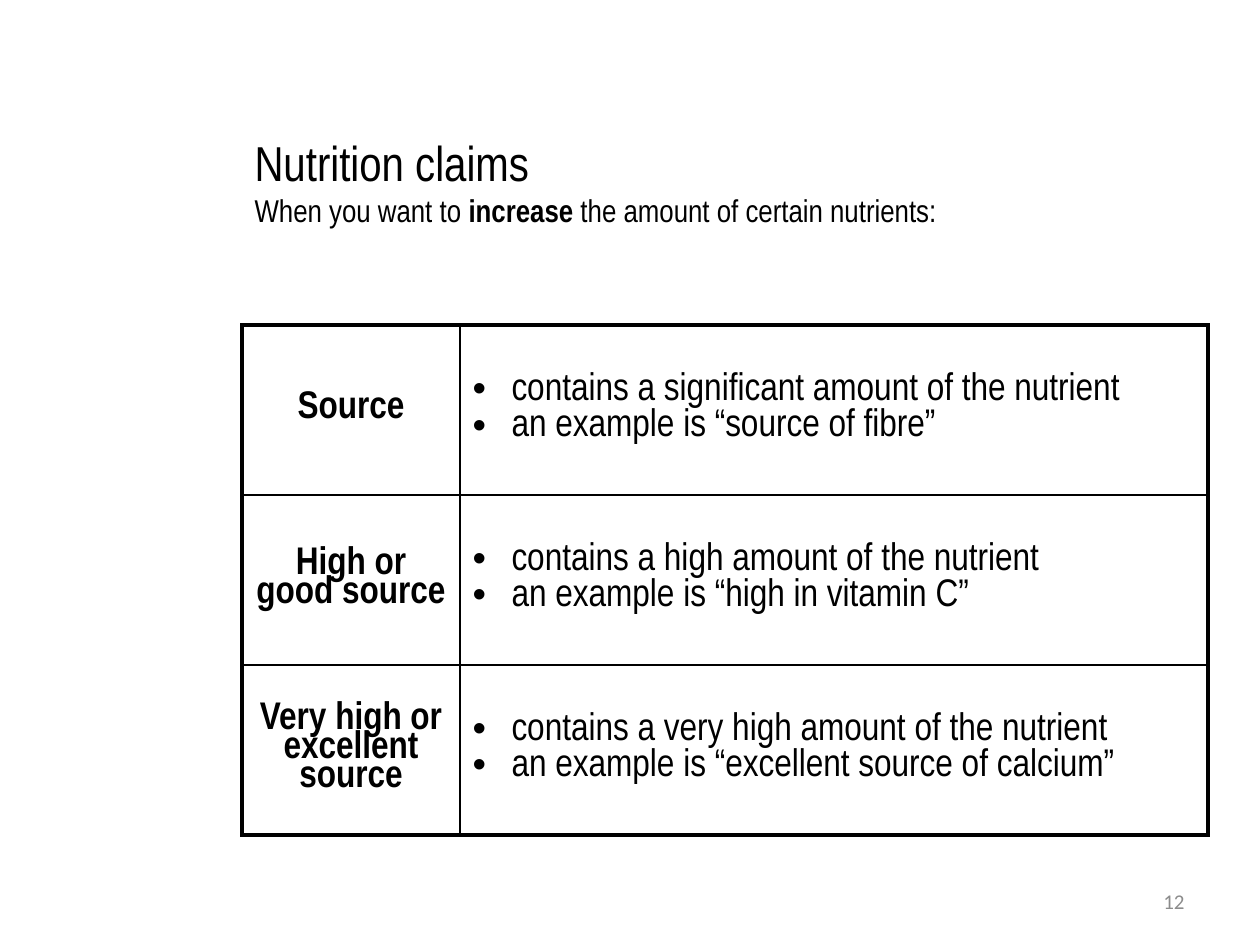
"""Build the slide on nutrition claims that increase nutrients."""
import pptx
import pptx.dml.color
import pptx.enum.text
import pptx.oxml
import pptx.oxml.ns
import pptx.util

COLORS = {"ink": "000000", "number": "8C8C8C"}
BODY_FONT = "Arial Narrow"
HEADING = "Nutrition claims"
SUBHEADING = [("When you want to ", False), ("increase", True),
              (" the amount of certain nutrients:", False)]
CLAIMS = [
    ("Source", ["contains a significant amount of the nutrient",
                "an example is “source of fibre”"]),
    ("High or good source", ["contains a high amount of the nutrient",
                             "an example is “high in vitamin C”"]),
    ("Very high or excellent source", ["contains a very high amount of the nutrient",
                                       "an example is “excellent source of calcium”"]),
]
PAGE_NUMBER = "12"
COLUMN_WIDTHS = [218, 748]
ROW_HEIGHT = 170
INDENT = 39
OUTER_LINE, INNER_LINE = 2.25, 1
ALIGN = pptx.enum.text.PP_ALIGN
ANCHOR = pptx.enum.text.MSO_ANCHOR


def px(length):
    return pptx.util.Emu(length * 914400 // 126)


def box(left, top, width, height):
    return [px(length) for length in (left, top, width, height)]


def style(paragraph, size, align=ALIGN.LEFT, bold=None, name=BODY_FONT, color="ink"):
    paragraph.alignment = align
    font = paragraph.font
    font.name, font.size, font.bold = name, pptx.util.Pt(size), bold
    font.color.rgb = pptx.dml.color.RGBColor.from_string(COLORS[color])


def add_bullet(paragraph):
    properties = paragraph._p.get_or_add_pPr()
    properties.set("marL", str(px(INDENT)))
    properties.set("indent", str(-px(INDENT)))
    namespace = pptx.oxml.ns.nsdecls("a")
    for tag in ('a:buFont {} typeface="Arial"', 'a:buChar {} char="•"'):
        properties.append(pptx.oxml.parse_xml(f"<{tag.format(namespace)}/>"))


def fill_cell(cell, lines, bulleted):
    cell.vertical_anchor = ANCHOR.MIDDLE
    cell.fill.background()
    cell.text = "\n".join(lines)
    for paragraph in cell.text_frame.paragraphs:
        paragraph.line_spacing = 0.8
        paragraph.space_before = pptx.util.Pt(4.4)
        if bulleted:
            add_bullet(paragraph)
        style(paragraph, 22, ALIGN.LEFT if bulleted else ALIGN.CENTER, not bulleted)


def set_borders(cell, row, column):
    outer = {"L": column == 0, "R": column == len(COLUMN_WIDTHS) - 1,
             "T": row == 0, "B": row == len(CLAIMS) - 1}
    for position, (side, is_outer) in enumerate(outer.items()):
        width = pptx.util.Pt(OUTER_LINE if is_outer else INNER_LINE)
        cell._tc.get_or_add_tcPr().insert(position, pptx.oxml.parse_xml(
            f'<a:ln{side} {pptx.oxml.ns.nsdecls("a")} w="{width}"><a:solidFill>'
            f'<a:srgbClr val="{COLORS["ink"]}"/></a:solidFill></a:ln{side}>'))


def add_title(slide):
    title = slide.shapes.title
    title.left, title.top, title.width, title.height = box(242, 126, 969, 147)
    frame = title.text_frame
    frame.vertical_anchor = ANCHOR.TOP
    frame.auto_size = pptx.enum.text.MSO_AUTO_SIZE.NONE
    frame.text = HEADING
    style(frame.paragraphs[0], 28)
    subheading = frame.add_paragraph()
    style(subheading, 18)
    for text, bold in SUBHEADING:
        run = subheading.add_run()
        run.text, run.font.bold = text, bold


def add_claims(slide):
    claims = slide.shapes.add_table(
        len(CLAIMS), len(COLUMN_WIDTHS),
        *box(242, 325, sum(COLUMN_WIDTHS), ROW_HEIGHT * len(CLAIMS))).table
    claims.first_row = claims.horz_banding = False
    for column, width in zip(claims.columns, COLUMN_WIDTHS):
        column.width = px(width)
    for row, (level, details) in enumerate(CLAIMS):
        claims.rows[row].height = px(ROW_HEIGHT)
        for column, lines in enumerate(([level], details)):
            cell = claims.cell(row, column)
            fill_cell(cell, lines, bulleted=column == 1)
            set_borders(cell, row, column)


def add_page_number(slide):
    frame = slide.shapes.add_textbox(*box(903, 876, 294, 50)).text_frame
    frame.word_wrap = True
    frame.vertical_anchor = ANCHOR.MIDDLE
    frame.text = PAGE_NUMBER
    style(frame.paragraphs[0], 12, ALIGN.RIGHT, name="Calibri", color="number")


def main():
    deck = pptx.Presentation()
    deck.slide_width, deck.slide_height = px(1260), px(945)
    slide = deck.slides.add_slide(deck.slide_layouts.get_by_name("Title Only"))
    add_title(slide)
    add_claims(slide)
    add_page_number(slide)
    deck.save("out.pptx")


if __name__ == "__main__":
    main()
